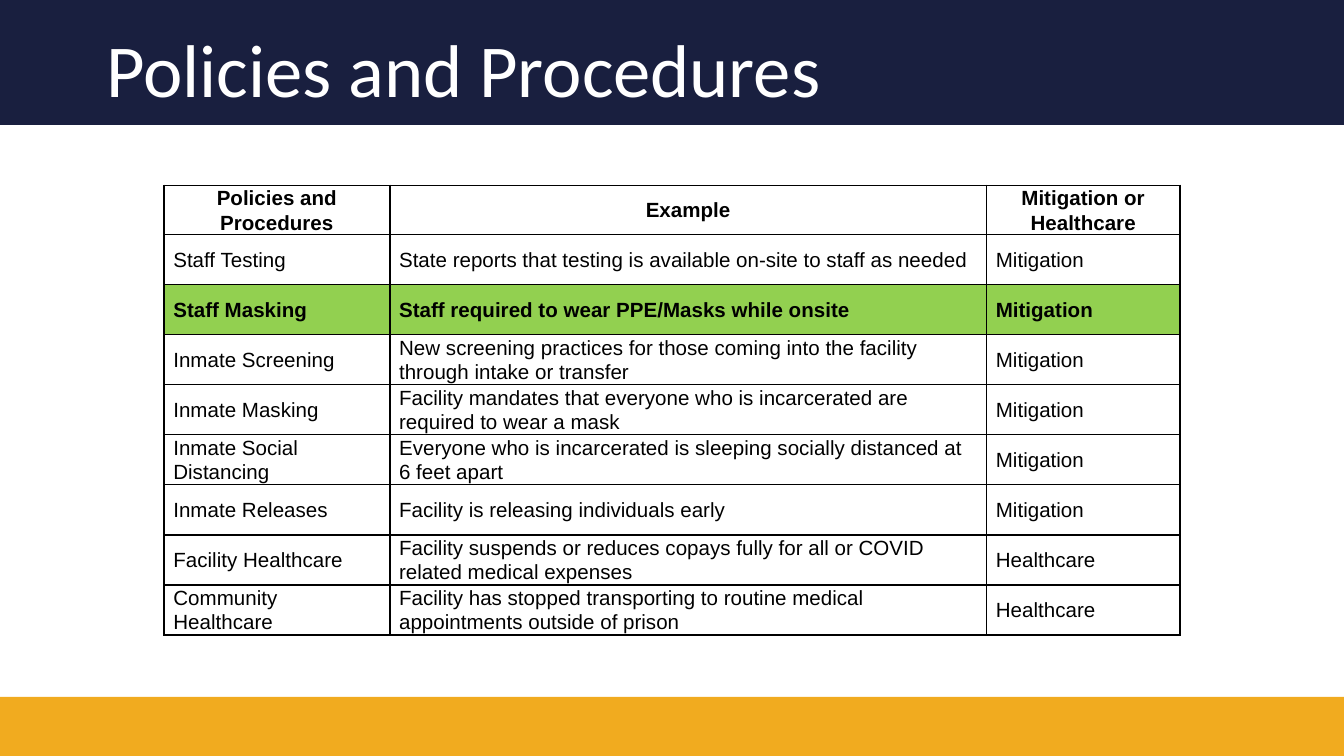
from dataclasses import dataclass

from lxml.etree import SubElement
from pptx import Presentation
from pptx.dml.color import RGBColor
from pptx.enum.shapes import MSO_SHAPE
from pptx.enum.text import MSO_ANCHOR, PP_ALIGN
from pptx.oxml.ns import qn
from pptx.util import Inches, Pt


@dataclass(frozen=True)
class Theme:
    navy: str = "191F3F"
    gold: str = "F1AB1F"
    white: str = "FFFFFF"
    black: str = "000000"
    highlight: str = "92D050"
    title_font: str = "Calibri"
    table_font: str = "Arial"
    title_size: int = 40
    table_size: int = 11
    border_width: int = 1


THEME = Theme()

TITLE = "Policies and Procedures"
HEADER = ("Policies and Procedures", "Example", "Mitigation or Healthcare")
POLICIES = [
    ("Staff Testing", "State reports that testing is available on-site to staff as needed", "Mitigation"),
    ("Staff Masking", "Staff required to wear PPE/Masks while onsite", "Mitigation"),
    ("Inmate Screening", "New screening practices for those coming into the facility through intake or transfer", "Mitigation"),
    ("Inmate Masking", "Facility mandates that everyone who is incarcerated are required to wear a mask", "Mitigation"),
    ("Inmate Social Distancing", "Everyone who is incarcerated is sleeping socially distanced at 6 feet apart", "Mitigation"),
    ("Inmate Releases", "Facility is releasing individuals early", "Mitigation"),
    ("Facility Healthcare", "Facility suspends or reduces copays fully for all or COVID related medical expenses", "Healthcare"),
    ("Community Healthcare", "Facility has stopped transporting to routine medical appointments outside of prison", "Healthcare"),
]
HIGHLIGHTED = "Staff Masking"

SLIDE_WIDTH = 10
SLIDE_HEIGHT = SLIDE_WIDTH * 9 / 16
FOOTER_HEIGHT = 0.44
BANDS = [  # top, height, colour
    (SLIDE_HEIGHT - FOOTER_HEIGHT, FOOTER_HEIGHT, THEME.gold),
    (0, 0.93, THEME.navy),
    (0.94, 0.33, THEME.white),
]
TABLE_LEFT, TABLE_TOP = 1.22, 1.38
COLUMN_WIDTHS = (1.68, 4.44, 1.44)
HEADER_HEIGHT = 0.19  # grows to fit its two lines
POLICY_HEIGHT = 2.98 / len(POLICIES)
CELL_MARGIN = 0.07


def add_band(slide, top, height, colour):
    band = slide.shapes.add_shape(
        MSO_SHAPE.RECTANGLE, 0, Inches(top), Inches(SLIDE_WIDTH), Inches(height))
    band.shadow.inherit = False
    band.fill.solid()
    band.fill.fore_color.rgb = RGBColor.from_string(colour)
    band.line.fill.background()


def write(paragraph, text, font, size, colour, bold=False):
    run = paragraph.add_run()
    run.text = text
    run.font.name = font
    run.font.size = Pt(size)
    run.font.bold = bold
    run.font.color.rgb = RGBColor.from_string(colour)


def add_title(slide):
    title = slide.shapes.title
    title.left, title.top = Inches(0.69), 0
    title.width, title.height = Inches(8.62), Inches(1.09)
    title.text_frame.vertical_anchor = MSO_ANCHOR.MIDDLE
    title.text_frame.word_wrap = True
    paragraph = title.text_frame.paragraphs[0]
    paragraph.alignment = PP_ALIGN.LEFT
    paragraph.line_spacing = 0.9
    write(paragraph, TITLE, THEME.title_font, THEME.title_size, THEME.white)
    slide.shapes._spTree.append(title._element)  # bring in front of the bands


def set_borders(cell):
    properties = cell._tc.get_or_add_tcPr()
    for side in ("a:lnL", "a:lnR", "a:lnT", "a:lnB"):
        line = SubElement(properties, qn(side), w=str(Pt(THEME.border_width)))
        fill = SubElement(line, qn("a:solidFill"))
        SubElement(fill, qn("a:srgbClr"), val=THEME.black)


def fill_cell(cell, text, is_header, is_highlighted):
    set_borders(cell)
    if is_highlighted:
        cell.fill.solid()
        cell.fill.fore_color.rgb = RGBColor.from_string(THEME.highlight)
    else:
        cell.fill.background()
    cell.margin_left = cell.margin_right = Inches(CELL_MARGIN)
    cell.margin_top = cell.margin_bottom = 0
    cell.vertical_anchor = MSO_ANCHOR.MIDDLE
    paragraph = cell.text_frame.paragraphs[0]
    paragraph.alignment = PP_ALIGN.CENTER if is_header else PP_ALIGN.LEFT
    paragraph.line_spacing = 1.07
    write(paragraph, text, THEME.table_font, THEME.table_size, THEME.black,
          bold=is_header or is_highlighted)


def add_policy_table(slide):
    rows = [HEADER, *POLICIES]
    heights = [HEADER_HEIGHT] + [POLICY_HEIGHT] * len(POLICIES)
    table = slide.shapes.add_table(
        len(rows), len(HEADER), Inches(TABLE_LEFT), Inches(TABLE_TOP),
        Inches(sum(COLUMN_WIDTHS)), Inches(sum(heights))).table
    table.first_row = table.horz_banding = False
    for column, width in zip(table.columns, COLUMN_WIDTHS):
        column.width = Inches(width)
    for row_index, (row, height) in enumerate(zip(rows, heights)):
        table.rows[row_index].height = Inches(height)
        for column_index, text in enumerate(row):
            fill_cell(table.cell(row_index, column_index), text,
                      row_index == 0, row[0] == HIGHLIGHTED)


def main():
    presentation = Presentation()
    presentation.slide_width = Inches(SLIDE_WIDTH)
    presentation.slide_height = Inches(SLIDE_HEIGHT)
    slide = presentation.slides.add_slide(presentation.slide_layouts[5])
    for band in BANDS:
        add_band(slide, *band)
    add_title(slide)
    add_policy_table(slide)
    presentation.save("out.pptx")


if __name__ == "__main__":
    main()
